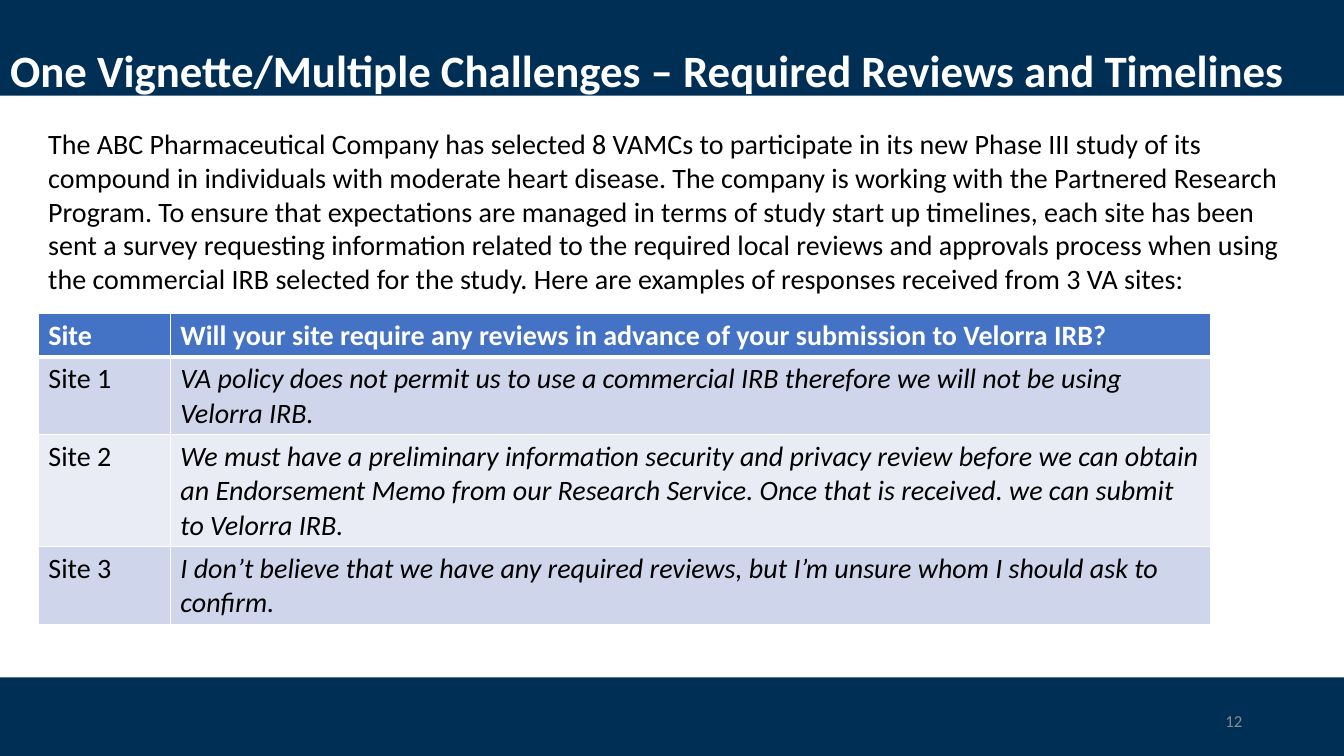
from pptx import Presentation
from pptx.dml.color import RGBColor
from pptx.enum.shapes import MSO_SHAPE
from pptx.enum.text import MSO_ANCHOR, MSO_AUTO_SIZE, PP_ALIGN
from pptx.oxml.ns import qn
from pptx.util import Inches, Pt
from lxml.etree import SubElement

COLORS = {
    "navy": "002F56",
    "white": "FFFFFF",
    "black": "000000",
    "gray": "8C8C8C",
    "header": "4472C4",
    "odd_row": "CFD5EA",
    "even_row": "E9EBF5",
}
FONT = "Calibri"

TITLE = "One Vignette/Multiple Challenges – Required Reviews and Timelines"
VIGNETTE = (
    "The ABC Pharmaceutical Company has selected 8 VAMCs to participate in its new "
    "Phase III study of its compound in individuals with moderate heart disease. "
    "The company is working with the Partnered Research Program. To ensure that "
    "expectations are managed in terms of study start up timelines, each site has been "
    "sent a survey requesting information related to the required local reviews and "
    "approvals process when using the commercial IRB selected for the study. Here are "
    "examples of responses received from 3 VA sites:"
)
RESPONSES = [
    ("Site", "Will your site require any reviews in advance of your submission to Velorra IRB?"),
    ("Site 1", "VA policy does not permit us to use a commercial IRB therefore we will not be "
               "using Velorra IRB."),
    ("Site 2", "We must have a preliminary information security and privacy review before we "
               "can obtain an Endorsement Memo from our Research Service. Once that is "
               "received. we can submit to Velorra IRB."),
    ("Site 3", "I don’t believe that we have any required reviews, but I’m unsure whom I "
               "should ask to confirm."),
]
COLUMN_WIDTHS = [1.31, 10.32]
ROW_HEIGHTS = [0.42, 0.77, 1.11, 0.77]


def rgb(name):
    return RGBColor.from_string(COLORS[name])


def add_run(paragraph, text, size, color, bold=False, italic=False):
    run = paragraph.add_run()
    run.text = text
    font = run.font
    font.name, font.size = FONT, Pt(size)
    font.bold, font.italic = bold, italic
    font.color.rgb = rgb(color)


def add_band(slide, top, height):
    """Draw a navy bar across the full slide width."""
    band = slide.shapes.add_shape(
        MSO_SHAPE.RECTANGLE, 0, Inches(top), Inches(13.33), Inches(height))
    band.shadow.inherit = False
    band.fill.solid()
    band.fill.fore_color.rgb = rgb("navy")
    band.line.fill.background()


def set_title(slide):
    title = slide.shapes.title
    title.left, title.top = Inches(0), Inches(0)
    title.width, title.height = Inches(12.95), Inches(1.45)
    frame = title.text_frame
    frame.word_wrap = True
    frame.auto_size = MSO_AUTO_SIZE.NONE
    frame.vertical_anchor = MSO_ANCHOR.MIDDLE
    paragraph = frame.paragraphs[0]
    paragraph.alignment = PP_ALIGN.LEFT
    paragraph.line_spacing = 0.9
    add_run(paragraph, TITLE, 32, "white", bold=True)


def add_text(slide, left, top, width, height, text, size, color,
             align=PP_ALIGN.LEFT, anchor=MSO_ANCHOR.TOP):
    box = slide.shapes.add_textbox(
        Inches(left), Inches(top), Inches(width), Inches(height))
    frame = box.text_frame
    frame.word_wrap = True
    frame.vertical_anchor = anchor
    frame.paragraphs[0].alignment = align
    add_run(frame.paragraphs[0], text, size, color)


def set_borders(cell, top, bottom):
    """Give a cell white borders; top and bottom widths are in points."""
    properties = cell._tc.get_or_add_tcPr()
    for side, width in (("L", 1), ("R", 1), ("T", top), ("B", bottom)):
        line = SubElement(properties, qn(f"a:ln{side}"), w=str(Pt(width)))
        fill = SubElement(line, qn("a:solidFill"))
        SubElement(fill, qn("a:srgbClr"), val=COLORS["white"])


def add_responses_table(slide):
    table = slide.shapes.add_table(
        len(RESPONSES), len(COLUMN_WIDTHS), Inches(0.38), Inches(3.11),
        Inches(sum(COLUMN_WIDTHS)), Inches(sum(ROW_HEIGHTS))).table
    for column, width in zip(table.columns, COLUMN_WIDTHS):
        column.width = Inches(width)
    for r, (texts, height) in enumerate(zip(RESPONSES, ROW_HEIGHTS)):
        table.rows[r].height = Inches(height)
        is_header = r == 0
        row_fill = "header" if is_header else "odd_row" if r % 2 else "even_row"
        for c, text in enumerate(texts):
            cell = table.cell(r, c)
            set_borders(cell, 3 if r == 1 else 1, 3 if is_header else 1)
            cell.fill.solid()
            cell.fill.fore_color.rgb = rgb(row_fill)
            add_run(cell.text_frame.paragraphs[0], text, 20,
                    "white" if is_header else "black",
                    bold=is_header, italic=c == 1 and not is_header)


def main():
    prs = Presentation()
    prs.slide_width, prs.slide_height = Inches(13.33), Inches(7.5)
    slide = prs.slides.add_slide(prs.slide_layouts[5])
    add_band(slide, 0, 0.95)
    add_band(slide, 6.72, 0.78)
    set_title(slide)
    # The title comes after the bands so that it lies in front of them.
    slide.shapes._spTree.append(slide.shapes.title._element)
    add_text(slide, 9.42, 6.95, 3, 0.4, "12", 12, "gray",
             align=PP_ALIGN.RIGHT, anchor=MSO_ANCHOR.MIDDLE)
    add_text(slide, 0.38, 1.21, 12.57, 1.78, VIGNETTE, 20, "black")
    add_responses_table(slide)
    prs.save("out.pptx")


if __name__ == "__main__":
    main()
